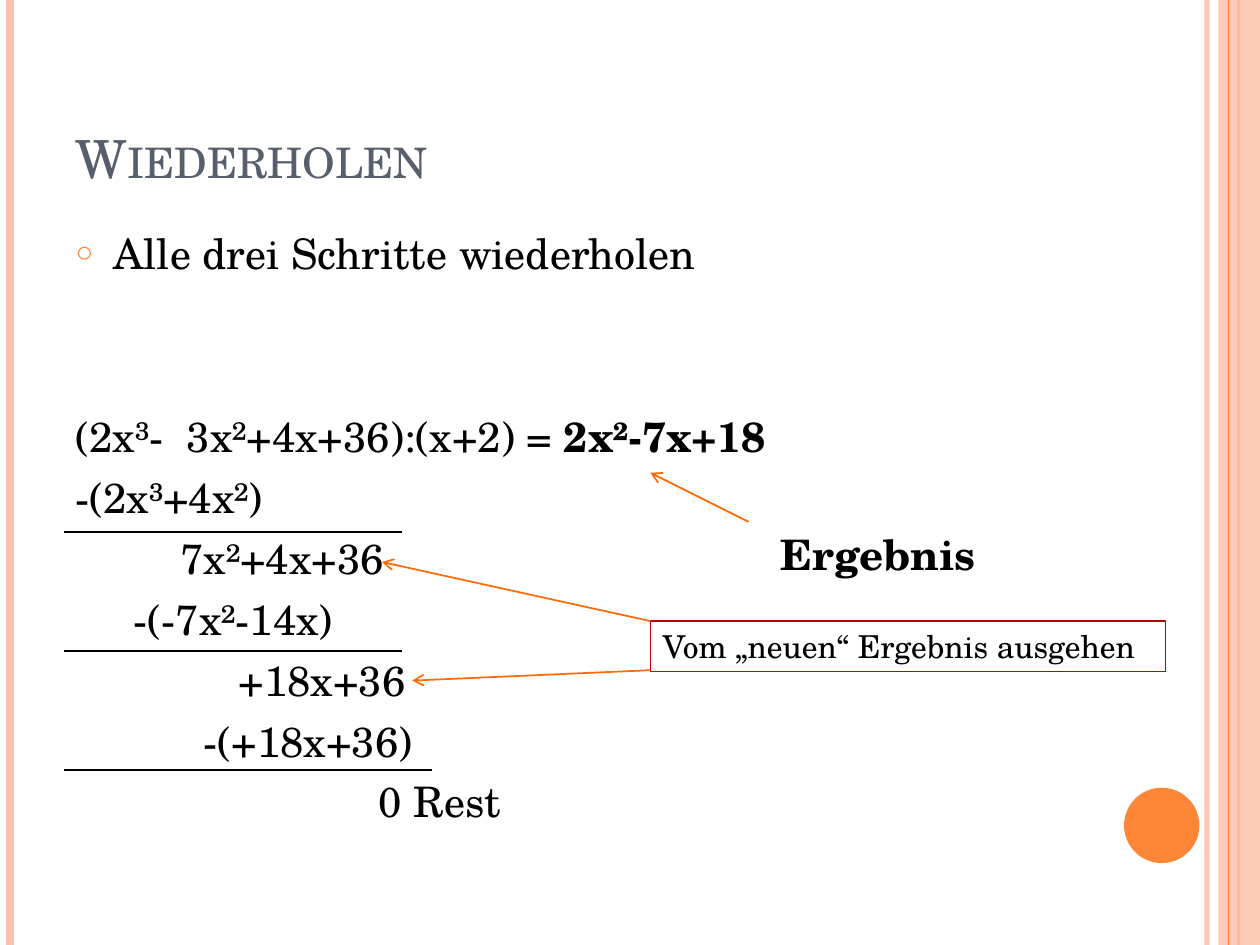
from pptx import Presentation
from pptx.dml.color import RGBColor
from pptx.enum.shapes import MSO_CONNECTOR as Connector, MSO_SHAPE as Preset
from pptx.enum.text import MSO_ANCHOR as Anchor, MSO_AUTO_SIZE as AutoSize, PP_ALIGN as Align
from pptx.oxml.ns import qn
from pptx.util import Cm, Pt
from lxml.etree import SubElement

WIDTH, HEIGHT = 25.4, 19.05
SPACE = 0.235


def color(hex_code):
    return RGBColor.from_string(hex_code)


class SlideBuilder:
    font = "TeX Gyre Schola"
    ink, heading, accent = "000000", "575F6D", "FE8637"
    pale, pointer, frame = "FEC3AE", "FF6B0A", "C00000"

    def __init__(self, deck):
        self.slide = deck.slides.add_slide(deck.slide_layouts[1])
        self.shapes = self.slide.shapes

    def place(self, shape, left, top, width, height):
        shape.left, shape.top = Cm(left), Cm(top)
        shape.width, shape.height = Cm(width), Cm(height)

    def frame_of(self, shape, anchor=Anchor.TOP):
        frame = shape.text_frame
        frame.word_wrap = True
        frame.auto_size = AutoSize.NONE
        frame.vertical_anchor = anchor
        return frame

    def run(self, paragraph, text, size=24, bold=False, ink=None):
        run = paragraph.add_run()
        run.text = text
        run.font.name = self.font
        run.font.size = Pt(size)
        run.font.bold = bold
        run.font.color.rgb = color(ink or self.ink)
        return run

    def opacity(self, fill_parent, percent):
        for hue in fill_parent.iter(qn("a:srgbClr")):
            SubElement(hue, qn("a:alpha"), val=str(percent * 1000))

    def title(self, text, *box):
        title = self.shapes.title
        self.place(title, *box)
        paragraph = self.frame_of(title, Anchor.BOTTOM).paragraphs[0]
        paragraph.alignment = Align.LEFT
        run = self.run(paragraph, text, 30, ink=self.heading)
        run.font._element.set("cap", "small")

    def body(self, *box):
        body = self.slide.placeholders[1]
        self.place(body, *box)
        return self.frame_of(body)

    def item(self, paragraph, hanging, first, space_before=6):
        paragraph.space_before = Pt(space_before)
        properties = paragraph._p.get_or_add_pPr()
        properties.set("marL", str(Cm(hanging)))
        properties.set("indent", str(Cm(first - hanging)))
        return properties

    def bullet(self, paragraph, text):
        properties = self.item(paragraph, 0.76, 0)
        hue = SubElement(properties, qn("a:buClr"))
        SubElement(hue, qn("a:srgbClr"), val=self.accent)
        SubElement(properties, qn("a:buSzPct"), val="70000")
        SubElement(properties, qn("a:buChar"), char="○")
        self.run(paragraph, text)

    def step(self, paragraph, runs, spaces, space_before=6):
        indent = spaces * SPACE
        properties = self.item(paragraph, indent, indent, space_before)
        SubElement(properties, qn("a:buNone"))
        for text, bold in runs:
            run = self.run(paragraph, text, bold=bold)
            if text == " ":
                run.font._element.set("spc", "667")

    def shape(self, preset, box, fill=None, line=None, opacity=100):
        shape = self.shapes.add_shape(preset, *map(Cm, box))
        shape.shadow.inherit = False
        if fill:
            shape.fill.solid()
            shape.fill.fore_color.rgb = color(fill)
            if opacity < 100:
                self.opacity(shape._element.spPr, opacity)
        else:
            shape.fill.background()
        if line:
            shape.line.color.rgb = color(line)
            shape.line.width = Pt(0.75)
        else:
            shape.line.fill.background()
        return shape

    def label(self, text, box):
        label = self.shapes.add_textbox(*map(Cm, box))
        self.run(self.frame_of(label).paragraphs[0], text, bold=True)

    def note(self, text, box):
        note = self.shape(Preset.RECTANGLE, box, line=self.frame)
        paragraph = self.frame_of(note).paragraphs[0]
        paragraph.alignment = Align.LEFT
        self.run(paragraph, text, 18)

    def line(self, start, end, ink, width=1, arrow=False, opacity=100):
        line = self.shapes.add_connector(Connector.STRAIGHT, *map(Cm, start + end))
        line.line.color.rgb = color(ink)
        line.line.width = Pt(width)
        properties = line._element.spPr
        if opacity < 100:
            self.opacity(properties, opacity)
        if arrow:
            SubElement(properties.find(qn("a:ln")), qn("a:tailEnd"), type="arrow")
        SubElement(properties, qn("a:effectLst"))

    def stripe(self, x, ink, width, opacity=100):
        self.line((x, 0), (x, HEIGHT), ink, width, opacity=opacity)


def main():
    deck = Presentation()
    deck.slide_width, deck.slide_height = Cm(WIDTH), Cm(HEIGHT)
    page = SlideBuilder(deck)

    page.stripe(24.33, page.pale, 3, 93)
    page.stripe(0.2, page.pale, 4.5)
    page.stripe(24.97, page.accent, 1.5)
    page.shape(Preset.RECTANGLE, (24.56, 0, 0.84, HEIGHT), page.pale, opacity=87)
    page.stripe(24.77, page.accent, 0.75)
    page.shape(Preset.OVAL, (22.66, 15.88, 1.52, 1.52), page.accent)

    page.title("Wiederholen", 1.27, 0.76, 20.75, 3.18)
    content = page.body(1.27, 4.45, 20.75, 13.54)
    page.bullet(content.paragraphs[0], "Alle drei Schritte wiederholen")
    division = [("(2x³-", False), (" ", False),
                ("3x²+4x+36):(x+2) = ", False), ("2x²-7x+18", True)]
    page.step(content.add_paragraph(), division, 0, 76)
    for text, spaces in [
        ("-(2x³+4x²)", 0),
        ("7x²+4x+36", 9),
        ("-(-7x²-14x)", 5),
        ("+18x+36", 14),
        ("-(+18x+36)", 11),
        ("0 Rest", 26),
    ]:
        page.step(content.add_paragraph(), [(text, False)], spaces)

    page.label("Ergebnis", (15.49, 10.52, 4.8, 1.3))
    for y, right in [(10.72, 8.1), (13.13, 8.1), (15.52, 8.71)]:
        page.line((1.3, y), (right, y), page.ink)
    page.note("Vom „neuen“ Ergebnis ausgehen", (13.11, 12.52, 10.39, 1.02))
    for start, end in [
        ((15.09, 10.52), (13.11, 9.53)),
        ((13.11, 12.52), (7.7, 11.33)),
        ((13.11, 13.51), (8.31, 13.72)),
    ]:
        page.line(start, end, page.pointer, arrow=True)

    deck.save("out.pptx")


if __name__ == "__main__":
    main()
